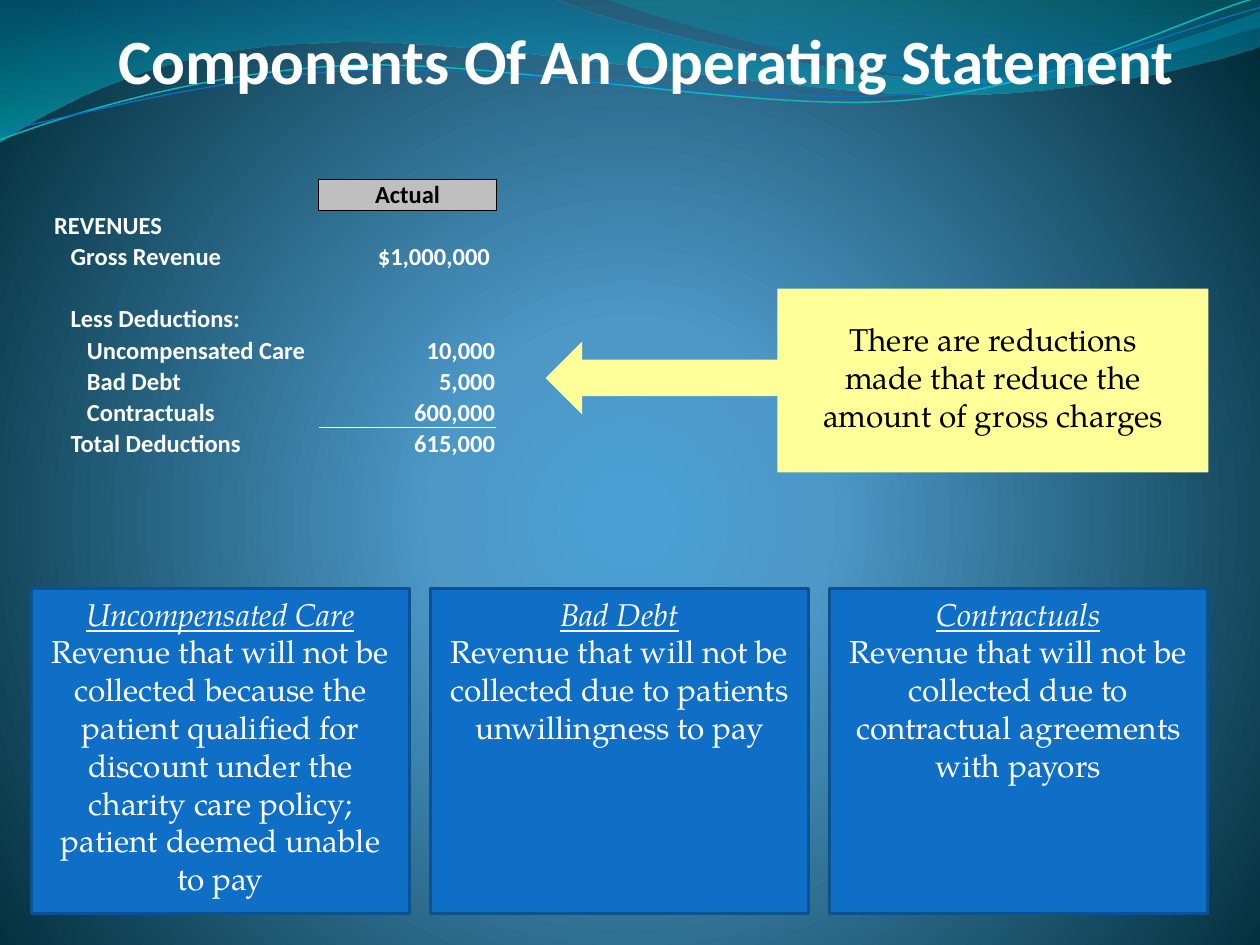
from lxml.etree import SubElement
from pptx import Presentation
from pptx.dml.color import RGBColor
from pptx.enum.shapes import MSO_SHAPE
from pptx.enum.text import MSO_ANCHOR, MSO_AUTO_SIZE, PP_ALIGN
from pptx.oxml import parse_xml
from pptx.oxml.ns import nsdecls, qn
from pptx.util import Inches, Pt


def paint(fill, code):
    fill.solid()
    fill.fore_color.rgb = RGBColor.from_string(code)


def blend(stops, shade):
    """Return a gradient fill from (percent, colour, opacity) stops."""
    marks = "".join(
        f'<a:gs pos="{pos * 1000}"><a:srgbClr val="{code}">'
        f'<a:alpha val="{alpha * 1000}"/></a:srgbClr></a:gs>'
        for pos, code, alpha in stops)
    return parse_xml(f'<a:gradFill {nsdecls("a")} rotWithShape="1">'
                     f'<a:gsLst>{marks}</a:gsLst>{shade}</a:gradFill>')


deck = Presentation()
deck.slide_width, deck.slide_height = Inches(10), Inches(7.5)
slide = deck.slides.add_slide(deck.slide_layouts[5])
shapes = slide.shapes

# Background: a glow just below the centre
slide.background.fill.solid()
back = slide.background._cSld.bg.bgPr
glow = ('<a:path path="circle"><a:fillToRect l="10000" t="110000" '
        'r="10000" b="100000"/></a:path>')
back.replace(back[0], blend([(0, "4AA0D6", 100), (25, "4C98C7", 100),
                             (100, "002C38", 100)], glow))

# Waves in hundredths of an inch: a step is a line (one point)
# or a Bezier curve (three points)
waves = [
    ([(0, 0), [(440, -1)],
      [(476, 17), (664, 63), (758, 63)],
      [(853, 63), (958, 26), (1000, 9)], [(1001, 36)],
      [(983, 44), (870, 76), (746, 75)],
      [(622, 75), (382, 28), (257, 34)],
      [(129, 36), (46, 83), (-1, 113)]],
     [(0, "0074A1", 45), (100, "00C6CF", 55)], None, 0),
    ([(479, -1), [(509, 11), (682, 62), (769, 65)],
      [(856, 69), (961, 32), (1000, 21)], [(1000, 0)]],
     [(0, "00A1A9", 30), (80, "008BBF", 45)], None, 0),
    ([(0, 111), [(48, 93), (158, 57), (277, 52)],
      [(395, 47), (593, 89), (713, 80)],
      [(833, 71), (938, 15), (998, -2)]], None, "0AB8BF", .85),
    ([(0, 104), [(47, 96), (164, 61), (283, 56)],
      [(403, 51), (597, 84), (717, 75)],
      [(836, 67), (941, 21), (1000, 6)]], None, "0F6FC6", .75),
]
for (start, *steps), stops, code, width in waves:
    knots = [step[-1] for step in steps]
    pen = shapes.build_freeform(*start, scale=Inches(.01))
    pen.add_line_segments(knots, close=bool(stops))
    wave = pen.convert_to_shape()
    wave.shadow.inherit = False
    wave.fill.background()
    props = wave._element.spPr
    left, top = map(min, zip(start, *knots))
    sides = list(props.iter(qn("a:lnTo")))
    for side, step in zip(sides, steps):
        if len(step) == 3:
            dots = "".join(f'<a:pt x="{x - left}" y="{y - top}"/>'
                           for x, y in step)
            side.getparent().replace(side, parse_xml(
                f'<a:cubicBezTo {nsdecls("a")}>{dots}</a:cubicBezTo>'))
    if stops:
        wave.line.fill.background()
        props.replace(props.find(qn("a:noFill")),
                      blend(stops, '<a:lin ang="5400000" scaled="0"/>'))
    else:
        paint(wave.line.fill, code)
        wave.line.width = Pt(width)

# Title, moved in front of the waves
title = shapes.title
shapes._spTree.append(title._element)
title.left, title.top = Inches(-1.14), Inches(-.25)
title.width, title.height = Inches(12.56), Inches(1.02)
frame = title.text_frame
frame.text = "Components Of An Operating Statement"
frame.auto_size = MSO_AUTO_SIZE.NONE
frame.vertical_anchor = MSO_ANCHOR.BOTTOM
frame.margin_left = frame.margin_top = frame.margin_bottom = 0
frame.margin_right = Inches(.02)
para = frame.paragraphs[0]
para.alignment = PP_ALIGN.CENTER
para.font.name, para.font.size, para.font.bold = "Calibri", Pt(36), True
paint(para.font.fill, "FFFFFF")

# Statement: indent level, label, amount
rows = [(0, "", "Actual"), (0, "REVENUES", ""),
        (1, "Gross Revenue", "$1,000,000"), (0, "", ""),
        (1, "Less Deductions:", ""), (2, "Uncompensated Care", "10,000"),
        (2, "Bad Debt", "5,000"), (2, "Contractuals", "600,000"),
        (1, "Total Deductions", "615,000")]
edges = {(0, 1): [(side, "000000", .5) for side in "LRTB"],
         (7, 1): [("B", "FFFFFF", 1)]}
table = shapes.add_table(len(rows), 2, Inches(.42), Inches(1.42),
                         Inches(3.52), Inches(.24 * len(rows))).table
table.first_row = table.horz_banding = False
table._tbl.tblPr[0].text = "{2D5ABB26-0587-4C30-8999-92F81FD0307C}"
table.columns[0].width, table.columns[1].width = Inches(2.11), Inches(1.41)
for r, (level, *texts) in enumerate(rows):
    for c, text in enumerate(texts):
        cell = table.cell(r, c)
        cell.text = text
        cell.vertical_anchor = MSO_ANCHOR.BOTTOM
        cell.margin_left = Inches(.01 + (.13 * level if c == 0 else 0))
        cell.margin_right = Inches(.05 if text.startswith("$") else .01)
        cell.margin_top, cell.margin_bottom = Inches(.01), 0
        para = cell.text_frame.paragraphs[0]
        head = (r, c) == (0, 1)
        para.alignment = (PP_ALIGN.CENTER if head else
                          PP_ALIGN.RIGHT if c else PP_ALIGN.LEFT)
        para.font.name, para.font.size, para.font.bold = "Calibri", Pt(14), True
        paint(para.font.fill, "000000" if head else "FFFFFF")
        props = cell._tc.get_or_add_tcPr()
        for side, code, width in edges.get((r, c), []):
            edge = SubElement(props, qn(f"a:ln{side}"), w=str(Pt(width)))
            solid = SubElement(edge, qn("a:solidFill"))
            SubElement(solid, qn("a:srgbClr"), val=code)
        if head:
            paint(cell.fill, "BFBFBF")
        else:
            cell.fill.background()

# Callout
for kind, *place in [(MSO_SHAPE.LEFT_ARROW, 4.33, 2.71, 2.08, .58),
                     (MSO_SHAPE.RECTANGLE, 6.17, 2.29, 3.42, 1.46)]:
    shape = shapes.add_shape(kind, *map(Inches, place))
    shape.shadow.inherit = False
    paint(shape.fill, "FFFF99")
    shape.line.fill.background()
note = shapes.add_textbox(*map(Inches, (6.42, 2.49, 2.92, 1.01))).text_frame
note.word_wrap = True
note.text = "There are reductions made that reduce the amount of gross charges"
para = note.paragraphs[0]
para.alignment = PP_ALIGN.CENTER
para.font.name, para.font.size = "TeX Gyre Pagella", Pt(18)
paint(para.font.fill, "000000")

# Definitions
terms = [
    ("Uncompensated Care",
     "Revenue that will not be collected because the patient qualified for "
     "discount under the charity care policy; patient deemed unable to pay"),
    ("Bad Debt",
     "Revenue that will not be collected due to patients unwillingness to pay"),
    ("Contractuals",
     "Revenue that will not be collected due to contractual agreements "
     "with payors"),
]
for n, term in enumerate(terms):
    box = shapes.add_shape(MSO_SHAPE.RECTANGLE, Inches(.25 + 9.5 / 3 * n),
                           Inches(4.67), Inches(3), Inches(2.58))
    box.shadow.inherit = False
    paint(box.fill, "0F6FC6")
    paint(box.line.fill, "0B5292")
    box.line.width = Pt(2)
    frame = box.text_frame
    frame.vertical_anchor = MSO_ANCHOR.TOP
    frame.text = "\n".join(term)
    for para, name in zip(frame.paragraphs, (True, False)):
        para.alignment = PP_ALIGN.CENTER
        para.font.name, para.font.size = "TeX Gyre Pagella", Pt(18)
        para.font.italic = para.font.underline = name
        paint(para.font.fill, "FFFFFF")

deck.save("out.pptx")
